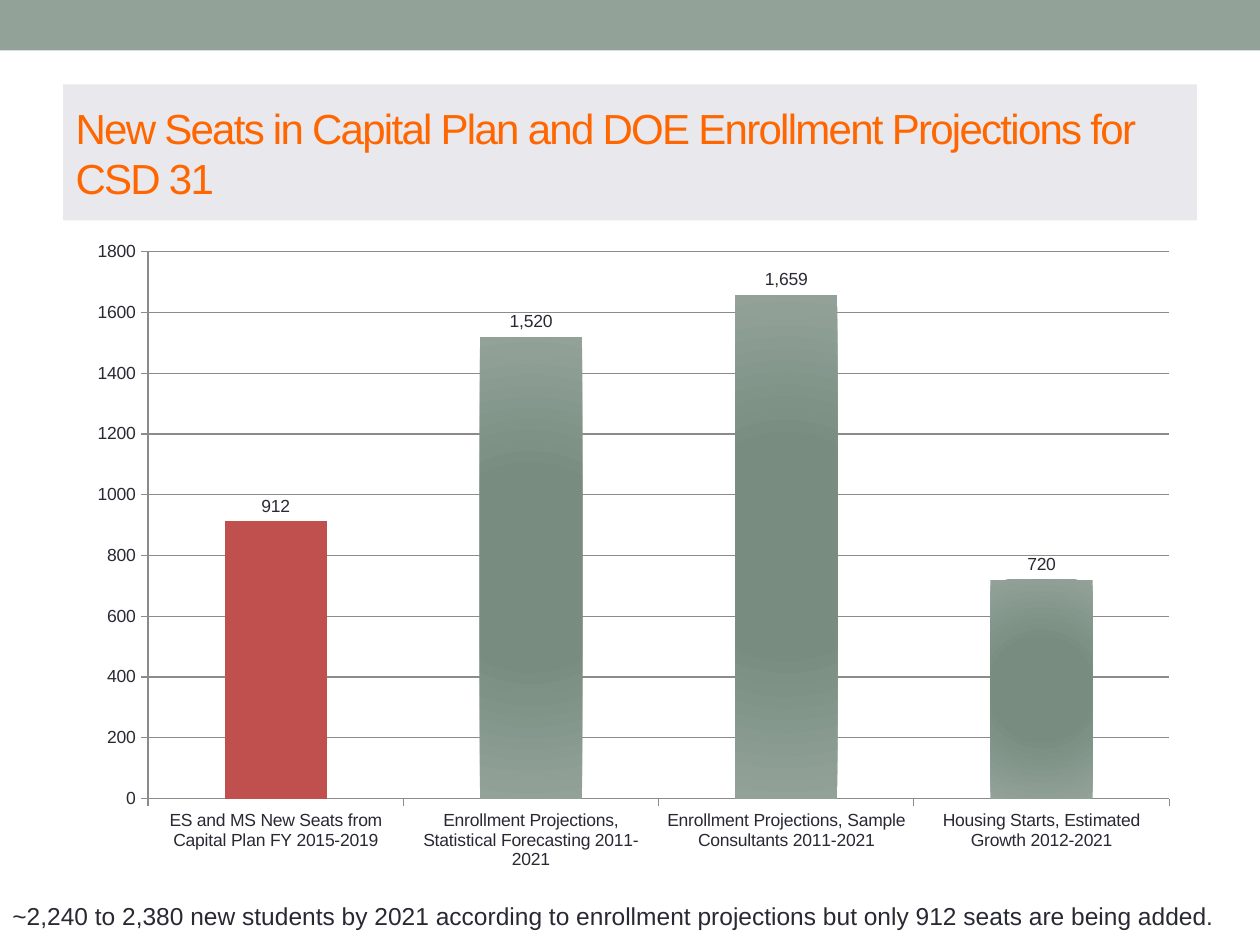
from dataclasses import dataclass

import pptx
import pptx.chart.data
import pptx.dml.color
import pptx.enum.chart
import pptx.enum.shapes
import pptx.enum.text
import pptx.oxml
import pptx.oxml.ns
import pptx.util
from pptx.util import Inches

FONT = "Arial"
COLORS = {
    "sage": "93A299",
    "deep_sage": "788D80",
    "red": "C0504D",
    "orange": "FF6600",
    "panel": "E8E8ED",
    "ink": "292934",
    "grid": "8B8B8B",
}


@dataclass(frozen=True)
class Bar:
    label: str
    seats: int


BARS = [
    Bar("ES and MS New Seats from Capital Plan FY 2015-2019", 912),
    Bar("Enrollment Projections, Statistical Forecasting 2011-2021", 1520),
    Bar("Enrollment Projections, Sample Consultants 2011-2021", 1659),
    Bar("Housing Starts, Estimated Growth 2012-2021", 720),
]


def color(name: str) -> pptx.dml.color.RGBColor:
    return pptx.dml.color.RGBColor.from_string(COLORS[name])


def fill_solid(fill, name: str) -> None:
    fill.solid()
    fill.fore_color.rgb = color(name)


def set_font(font, size: float, name: str) -> None:
    font.name = FONT
    font.size = pptx.util.Pt(size)
    font.bold = False
    font.color.rgb = color(name)


def add_top_band(slide) -> None:
    band = slide.shapes.add_shape(
        pptx.enum.shapes.MSO_SHAPE.RECTANGLE, 0, 0, Inches(10), Inches(0.4))
    band.shadow.inherit = False
    fill_solid(band.fill, "sage")
    band.line.fill.background()


def format_title(slide) -> None:
    title = slide.shapes.title
    title.left, title.top = Inches(0.5), Inches(0.67)
    title.width, title.height = Inches(9), Inches(1.08)
    fill_solid(title.fill, "panel")
    frame = title.text_frame
    frame.text = "New Seats in Capital Plan and DOE Enrollment Projections for CSD 31"
    frame.word_wrap = True
    frame.auto_size = pptx.enum.text.MSO_AUTO_SIZE.NONE
    frame.vertical_anchor = pptx.enum.text.MSO_ANCHOR.MIDDLE
    paragraph = frame.paragraphs[0]
    paragraph.alignment = pptx.enum.text.PP_ALIGN.LEFT
    set_font(paragraph.font, 24, "orange")
    paragraph.runs[0].font._element.set("spc", "-100")


def set_radial_fill(series) -> None:
    fill_solid(series.format.fill, "sage")
    solid = series._element.spPr.find(pptx.oxml.ns.qn("a:solidFill"))
    gradient = pptx.oxml.parse_xml(
        f'<a:gradFill {pptx.oxml.ns.nsdecls("a")} rotWithShape="1"><a:gsLst>'
        f'<a:gs pos="0"><a:srgbClr val="{COLORS["deep_sage"]}"/></a:gs>'
        f'<a:gs pos="40000"><a:srgbClr val="{COLORS["deep_sage"]}"/></a:gs>'
        f'<a:gs pos="100000"><a:srgbClr val="{COLORS["sage"]}"/></a:gs>'
        '</a:gsLst><a:path path="circle">'
        '<a:fillToRect l="50000" t="50000" r="50000" b="50000"/>'
        '</a:path></a:gradFill>')
    solid.getparent().replace(solid, gradient)


def set_plot_area(chart, left: float, top: float, width: float, height: float) -> None:
    plot_area = chart._chartSpace.chart.plotArea
    for old_layout in plot_area.findall(pptx.oxml.ns.qn("c:layout")):
        plot_area.remove(old_layout)
    sizes = {"x": left, "y": top, "w": width, "h": height}
    modes = "".join(f'<c:{side}Mode val="edge"/>' for side in "xy")
    values = "".join(f'<c:{side} val="{value}"/>' for side, value in sizes.items())
    plot_area.insert(0, pptx.oxml.parse_xml(
        f'<c:layout {pptx.oxml.ns.nsdecls("c")}><c:manualLayout>'
        f'<c:layoutTarget val="inner"/>{modes}{values}</c:manualLayout></c:layout>'))


def format_line(line) -> None:
    line.color.rgb = color("grid")
    line.width = pptx.util.Pt(0.75)


def add_seats_chart(slide, bars: list[Bar]) -> None:
    chart_data = pptx.chart.data.CategoryChartData()
    chart_data.categories = [bar.label for bar in bars]
    chart_data.add_series("Series 1", [bar.seats for bar in bars])
    chart = slide.shapes.add_chart(
        pptx.enum.chart.XL_CHART_TYPE.COLUMN_CLUSTERED,
        Inches(0.7), Inches(1.92), Inches(8.8), Inches(4.99), chart_data).chart
    chart.has_title = False
    chart.has_legend = False
    set_font(chart.font, 10, "ink")
    set_plot_area(chart, 0.054, 0.012, 0.921, 0.873)

    for axis in (chart.category_axis, chart.value_axis):
        axis.major_tick_mark = pptx.enum.chart.XL_TICK_MARK.OUTSIDE
        axis.minor_tick_mark = pptx.enum.chart.XL_TICK_MARK.NONE
        format_line(axis.format.line)
    value_axis = chart.value_axis
    value_axis.minimum_scale, value_axis.maximum_scale = 0, 1800
    value_axis.major_unit = 200
    value_axis.has_major_gridlines = True
    format_line(value_axis.major_gridlines.format.line)
    value_axis.tick_labels.number_format = "0"
    value_axis.tick_labels.number_format_is_linked = False

    plot = chart.plots[0]
    plot.gap_width = 150
    plot.vary_by_categories = False
    series = plot.series[0]
    set_radial_fill(series)
    fill_solid(series.points[0].format.fill, "red")
    labels = series.data_labels
    labels.show_value = True
    labels.number_format = "#,##0"
    labels.number_format_is_linked = False
    labels.position = pptx.enum.chart.XL_LABEL_POSITION.OUTSIDE_END


def add_takeaway(slide) -> None:
    text_box = slide.shapes.add_textbox(0, Inches(7.1), Inches(9.81), Inches(0.34))
    frame = text_box.text_frame
    frame.word_wrap = False
    frame.text = ("~2,240 to 2,380 new students by 2021 according to enrollment "
                  "projections but only 912 seats are being added.")
    set_font(frame.paragraphs[0].font, 14, "ink")


def main() -> None:
    presentation = pptx.Presentation()
    presentation.slide_width = Inches(10)
    presentation.slide_height = Inches(7.5)
    slide = presentation.slides.add_slide(presentation.slide_layouts[5])
    add_top_band(slide)
    format_title(slide)
    add_seats_chart(slide, BARS)
    add_takeaway(slide)
    presentation.save("out.pptx")


if __name__ == "__main__":
    main()
